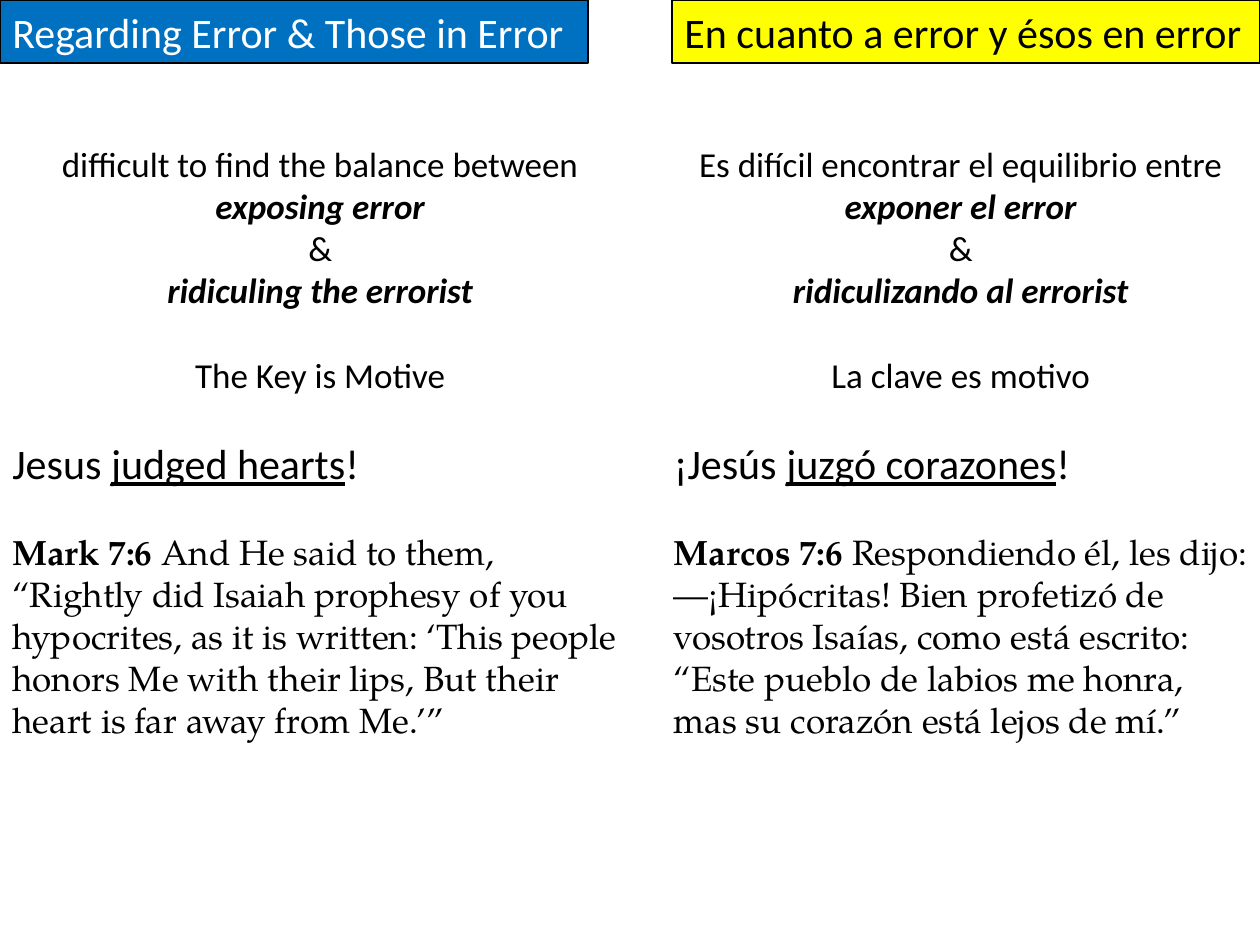
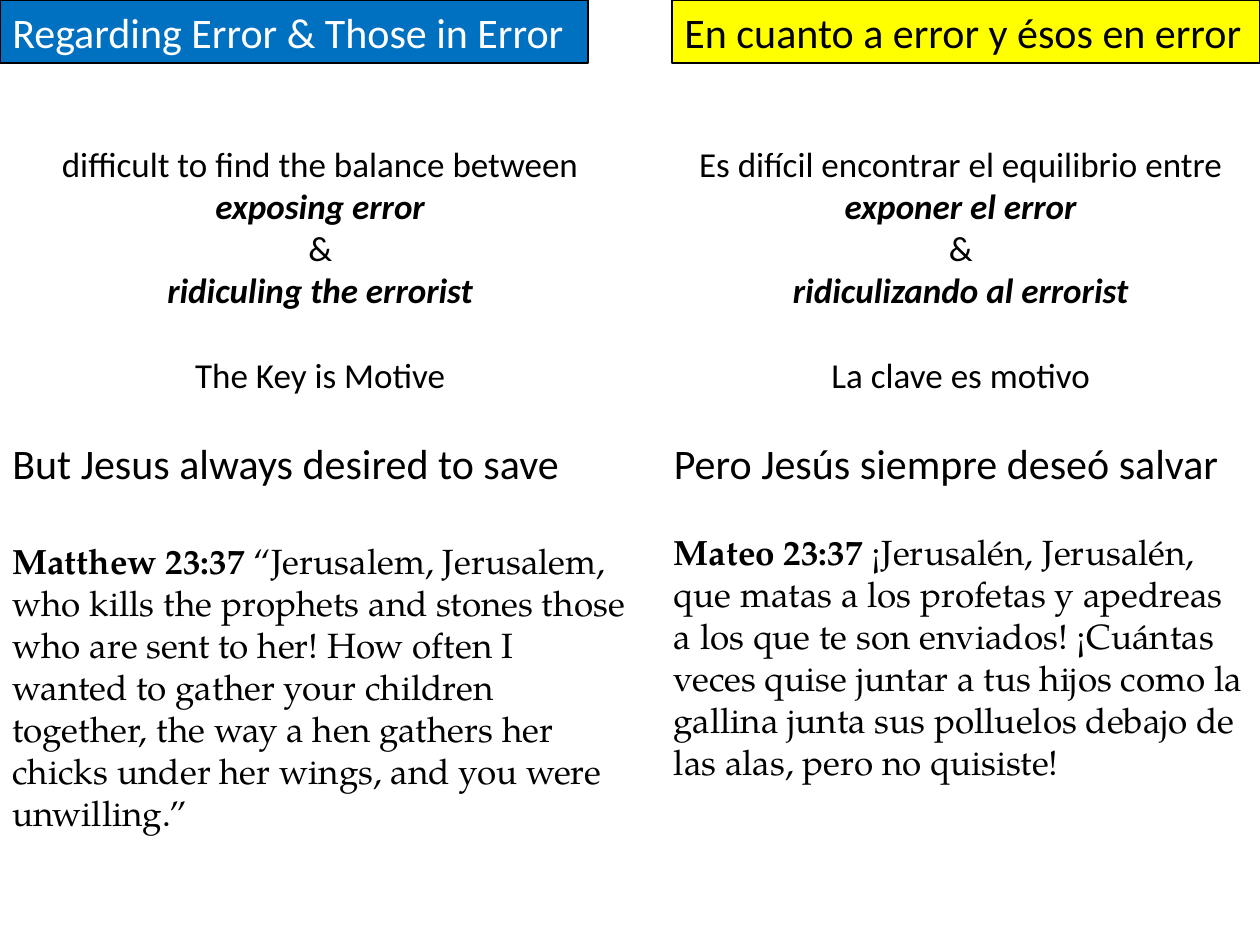
"""Build two bilingual slides on error and those in error."""
import pptx
import pptx.dml.color
import pptx.enum.shapes
import pptx.enum.text
import pptx.util

Pt = pptx.util.Pt
RGBColor = pptx.dml.color.RGBColor
ALIGN = pptx.enum.text.PP_ALIGN

BLACK = RGBColor(0x00, 0x00, 0x00)
WHITE = RGBColor(0xFF, 0xFF, 0xFF)
BLUE = RGBColor(0x00, 0x70, 0xC0)
YELLOW = RGBColor(0xFF, 0xFF, 0x00)

SANS = "Calibri"
SERIF = "TeX Gyre Pagella"
TEXT_SIZE = 20
HEADING_SIZE = 24
TEXT_GAP = 24.4
HEADING_GAP = 29.3

SLIDE_WIDTH = 720
SLIDE_HEIGHT = 540
BAND_WIDTH = 336
BAND_HEIGHT = 36
BODY_TOP = 77.75

STRONG = {"bold": True, "italic": True}
BOLD = {"bold": True}
UNDERLINE = {"underline": True}
PLAIN = {}

ENGLISH = {
    "title": "Regarding Error & Those in Error",
    "band": (0, BLUE, WHITE),
    "body": (0, 366),
    "balance": [
        [("difficult to find the balance between ", PLAIN), ("exposing error", STRONG)],
        [("&", PLAIN)],
        [("ridiculing the errorist", STRONG)],
    ],
    "key": "The Key is Motive",
}
SPANISH = {
    "title": "En cuanto a error y ésos en error",
    "band": (SLIDE_WIDTH - BAND_WIDTH, YELLOW, BLACK),
    "body": (378, 342),
    "balance": [
        [("Es difícil encontrar el equilibrio entre", PLAIN)],
        [("exponer el error", STRONG)],
        [("&", PLAIN)],
        [("ridiculizando al errorist", STRONG)],
    ],
    "key": "La clave es motivo",
}

JUDGED_HEARTS = [
    (ENGLISH, 351, [("Jesus ", PLAIN), ("judged hearts", UNDERLINE), ("!", PLAIN)], TEXT_GAP, [
        [("Mark 7:6", BOLD),
         (" And He said to them, “Rightly did Isaiah prophesy of you hypocrites, "
          "as it is written: ‘This people honors Me with their lips, "
          "But their heart is far away from Me.’”", PLAIN)],
    ]),
    (SPANISH, 376, [("¡Jesús ", PLAIN), ("juzgó corazones", UNDERLINE), ("!", PLAIN)], TEXT_GAP, [
        [("Marcos 7:6", BOLD), (" Respondiendo él, les dijo:", PLAIN)],
        [("—¡Hipócritas! Bien profetizó de vosotros Isaías, como está escrito:", PLAIN)],
        [("“Este pueblo de labios me honra,\nmas su corazón está lejos de mí.”", PLAIN)],
    ]),
]
DESIRED_TO_SAVE = [
    (ENGLISH, 405, [("But Jesus always desired to save", PLAIN)], HEADING_GAP, [
        [("Matthew 23:37", BOLD),
         (" “Jerusalem, Jerusalem, who kills the prophets and stones those who are sent "
          "to her! How often I wanted to gather your children together, the way a hen "
          "gathers her chicks under her wings, and you were unwilling.”", PLAIN)],
    ]),
    (SPANISH, 376, [("Pero Jesús siempre deseó salvar", PLAIN)], TEXT_GAP, [
        [("Mateo 23:37 ", BOLD),
         ("¡Jerusalén, Jerusalén, que matas a los profetas y apedreas a los que te son "
          "enviados! ¡Cuántas veces quise juntar a tus hijos como la gallina junta sus "
          "polluelos debajo de las alas, pero no quisiste!", PLAIN)],
    ]),
]


def add_runs(paragraph, runs, size, font_name, color):
    """Add styled runs to a paragraph, with a line break at each newline."""
    for text, style in runs:
        for index, line in enumerate(text.split("\n")):
            if index:
                paragraph.add_line_break()
            run = paragraph.add_run()
            run.text = line
            run.font.size = Pt(size)
            run.font.name = font_name
            run.font.color.rgb = color
            for attribute, value in style.items():
                setattr(run.font, attribute, value)


def prepare_frame(shape):
    """Make a shape wrap its text from the top and return the text frame."""
    frame = shape.text_frame
    frame.word_wrap = True
    frame.auto_size = pptx.enum.text.MSO_AUTO_SIZE.SHAPE_TO_FIT_TEXT
    frame.vertical_anchor = pptx.enum.text.MSO_ANCHOR.TOP
    return frame


def add_title_band(slide, language):
    """Add the coloured title band of one language."""
    left, fill_color, text_color = language["band"]
    band = slide.shapes.add_shape(
        pptx.enum.shapes.MSO_SHAPE.RECTANGLE,
        Pt(left), Pt(0), Pt(BAND_WIDTH), Pt(BAND_HEIGHT))
    band.shadow.inherit = False
    band.fill.solid()
    band.fill.fore_color.rgb = fill_color
    band.line.color.rgb = BLACK
    band.line.width = Pt(0.75)
    paragraph = prepare_frame(band).paragraphs[0]
    paragraph.alignment = ALIGN.LEFT
    add_runs(paragraph, [(language["title"], PLAIN)], HEADING_SIZE, SANS, text_color)


def add_body(slide, language, height, heading, verse_gap, verse):
    """Add the balance statement, the heading and the verse of one language."""
    left, width = language["body"]
    box = slide.shapes.add_textbox(Pt(left), Pt(BODY_TOP), Pt(width), Pt(height))
    frame = prepare_frame(box)
    rows = [(runs, ALIGN.CENTER, TEXT_SIZE, SANS, 0) for runs in language["balance"]]
    rows.append(([(language["key"], PLAIN)], ALIGN.CENTER, TEXT_SIZE, SANS, TEXT_GAP))
    rows.append((heading, ALIGN.LEFT, HEADING_SIZE, SANS, TEXT_GAP))
    for index, runs in enumerate(verse):
        rows.append((runs, ALIGN.LEFT, TEXT_SIZE, SERIF, 0 if index else verse_gap))
    for index, (runs, alignment, size, font_name, gap) in enumerate(rows):
        paragraph = frame.add_paragraph() if index else frame.paragraphs[0]
        paragraph.alignment = alignment
        paragraph.space_before = Pt(gap)
        add_runs(paragraph, runs, size, font_name, BLACK)


def main():
    """Build and save the presentation."""
    presentation = pptx.Presentation()
    presentation.slide_width = Pt(SLIDE_WIDTH)
    presentation.slide_height = Pt(SLIDE_HEIGHT)
    for columns in (JUDGED_HEARTS, DESIRED_TO_SAVE):
        slide = presentation.slides.add_slide(presentation.slide_layouts[6])
        for language, height, heading, verse_gap, verse in columns:
            add_title_band(slide, language)
            add_body(slide, language, height, heading, verse_gap, verse)
    presentation.save("out.pptx")


if __name__ == "__main__":
    main()
